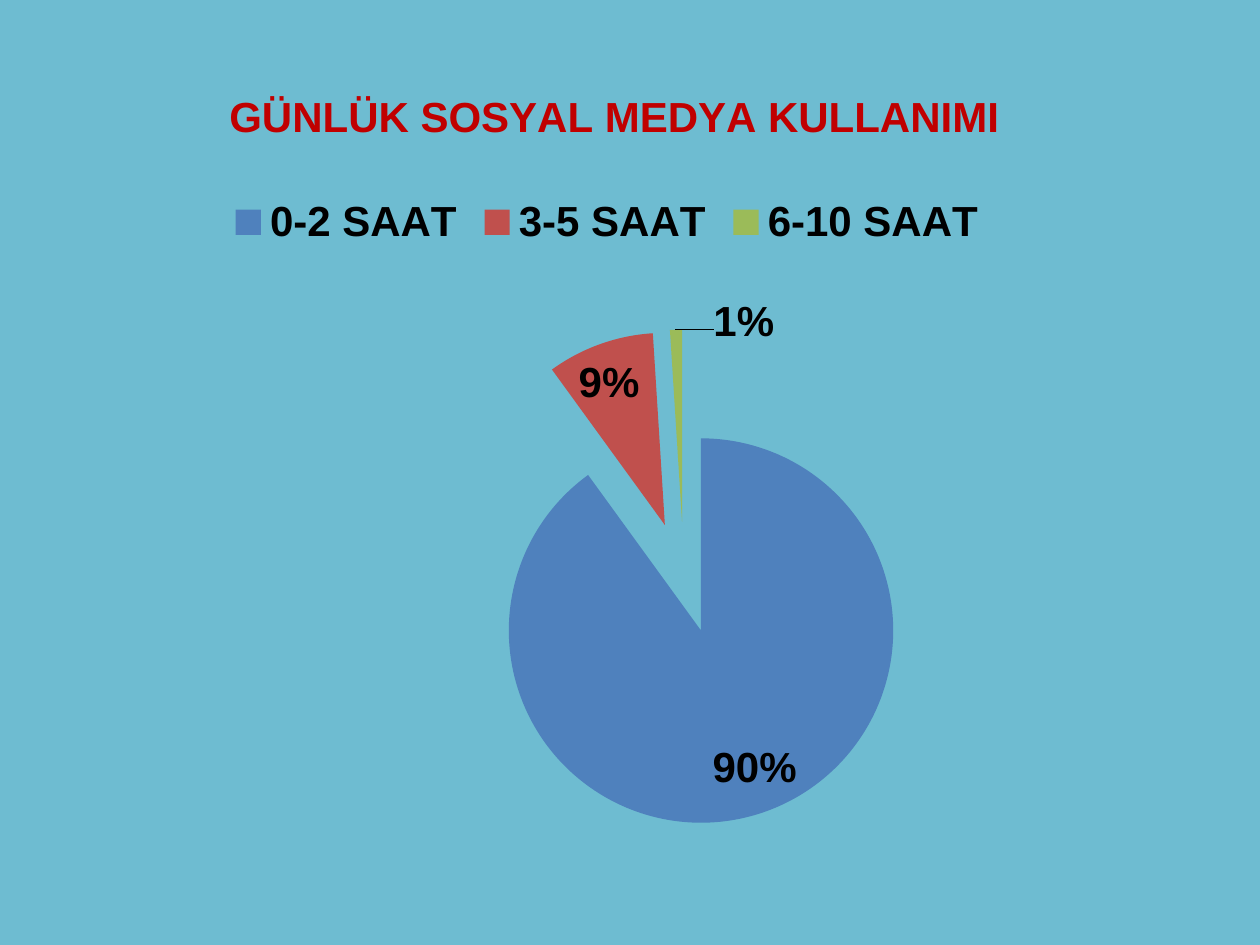
import dataclasses
import lxml.etree
import pptx
import pptx.chart.data
import pptx.dml.color
import pptx.enum.chart
import pptx.oxml
import pptx.oxml.ns
import pptx.util


@dataclasses.dataclass(frozen=True)
class Theme:
    back: str = "6EBCD1"
    title: str = "C00000"
    text: str = "000000"
    slices: tuple = ("4F81BD", "C0504D", "9BBB59", "8064A2")
    face: str = "Arial"
    size: int = 24


THEME = Theme()
HOURS = (("0-2 SAAT", 90), ("3-5 SAAT", 9), ("6-10 SAAT ", 1), (" ", 0))
EMPTY = 3


def paint(fill, tone):
    fill.solid()
    fill.fore_color.rgb = pptx.dml.color.RGBColor.from_string(tone)


def style(font, tone):
    font.name = THEME.face
    font.size = pptx.util.Pt(THEME.size)
    font.bold = True
    paint(font.fill, tone)


def make(text):
    space = pptx.oxml.ns.nsdecls("c")
    return pptx.oxml.parse_xml(text.replace(">", f" {space}>", 1))


def place(left, top, width=None, height=None):
    parts = ['<c:layoutTarget val="inner"/>'] if width else []
    parts += ['<c:xMode val="edge"/>', '<c:yMode val="edge"/>']
    sides = zip("xywh", (left, top, width, height))
    parts += [f'<c:{key} val="{val}"/>' for key, val in sides if val is not None]
    return make(f'<c:layout><c:manualLayout>{"".join(parts)}</c:manualLayout></c:layout>')


def swap(parent, layout, before):
    for old in parent.findall(pptx.oxml.ns.qn("c:layout")):
        parent.remove(old)
    parent.find(pptx.oxml.ns.qn(before)).addprevious(layout)


def draw_title(chart):
    chart.has_title = True
    para = chart.chart_title.text_frame.paragraphs[0]
    para.text = "GÜNLÜK SOSYAL MEDYA KULLANIMI"
    style(para.font, THEME.title)
    swap(chart.chart_title._element, place(0.14, 0.02), "c:overlay")


def draw_legend(chart):
    chart.has_legend = True
    legend = chart.legend
    legend.position = pptx.enum.chart.XL_LEGEND_POSITION.TOP
    legend.include_in_layout = False
    style(legend.font, THEME.text)
    node = legend._element
    swap(node, place(0.14, 0.16), "c:overlay")
    entry = make(f'<c:legendEntry><c:idx val="{EMPTY}"/><c:delete val="1"/></c:legendEntry>')
    node.find(pptx.oxml.ns.qn("c:layout")).addprevious(entry)


def draw_labels(plot):
    labels = plot.series[0].data_labels
    labels.show_percentage = True
    labels.show_value = False
    labels.number_format = "0%"
    labels.number_format_is_linked = False
    labels.position = pptx.enum.chart.XL_LABEL_POSITION.BEST_FIT
    style(labels.font, THEME.text)
    node = labels._element
    flags = "".join(
        f'<c:show{name} val="{int(name == "Percent")}"/>'
        for name in ("LegendKey", "Val", "CatName", "SerName", "Percent", "BubbleSize"))
    small = make(
        '<c:dLbl><c:idx val="2"/><c:layout><c:manualLayout><c:x val="0.06"/>'
        '<c:y val="0.03"/></c:manualLayout></c:layout>'
        f'<c:dLblPos val="bestFit"/>{flags}</c:dLbl>')
    gone = make(f'<c:dLbl><c:idx val="{EMPTY}"/><c:delete val="1"/></c:dLbl>')
    node.insert(0, small)
    node.insert(1, gone)
    for old in node.findall(pptx.oxml.ns.qn("c:showLeaderLines")):
        node.remove(old)
    node.append(make('<c:showLeaderLines val="1"></c:showLeaderLines>'))


def draw_slices(plot):
    plot.vary_by_categories = True
    series = plot.series[0]
    for rank, tone in enumerate(THEME.slices):
        paint(series.points[rank].format.fill, tone)
    first = series._element.find(pptx.oxml.ns.qn("c:dPt"))
    first.addprevious(make('<c:explosion val="29"></c:explosion>'))


def draw_pie(slide, box):
    data = pptx.chart.data.CategoryChartData()
    data.categories = [name for name, _ in HOURS]
    data.add_series("Series 1", [share for _, share in HOURS])
    kind = pptx.enum.chart.XL_CHART_TYPE.PIE
    chart = slide.shapes.add_chart(kind, *box, data).chart
    chart.font.name = "Calibri"
    chart.font.size = pptx.util.Pt(10)
    draw_title(chart)
    draw_legend(chart)
    plot = chart.plots[0]
    draw_slices(plot)
    draw_labels(plot)
    area = chart._chartSpace.find(".//" + pptx.oxml.ns.qn("c:plotArea"))
    swap(area, place(0.095, 0.34, 0.905, 0.64), "c:pieChart")


def main():
    deck = pptx.Presentation()
    deck.slide_width = pptx.util.Inches(10)
    deck.slide_height = pptx.util.Inches(7.5)
    slide = deck.slides.add_slide(deck.slide_layouts[6])
    paint(slide.background.fill, THEME.back)
    wide, high = deck.slide_width, deck.slide_height
    box = [int(side) for side in (wide * 0.05, high * 0.07, wide * 0.9, high * 0.82)]
    draw_pie(slide, box)
    deck.save("out.pptx")


if __name__ == "__main__":
    main()
